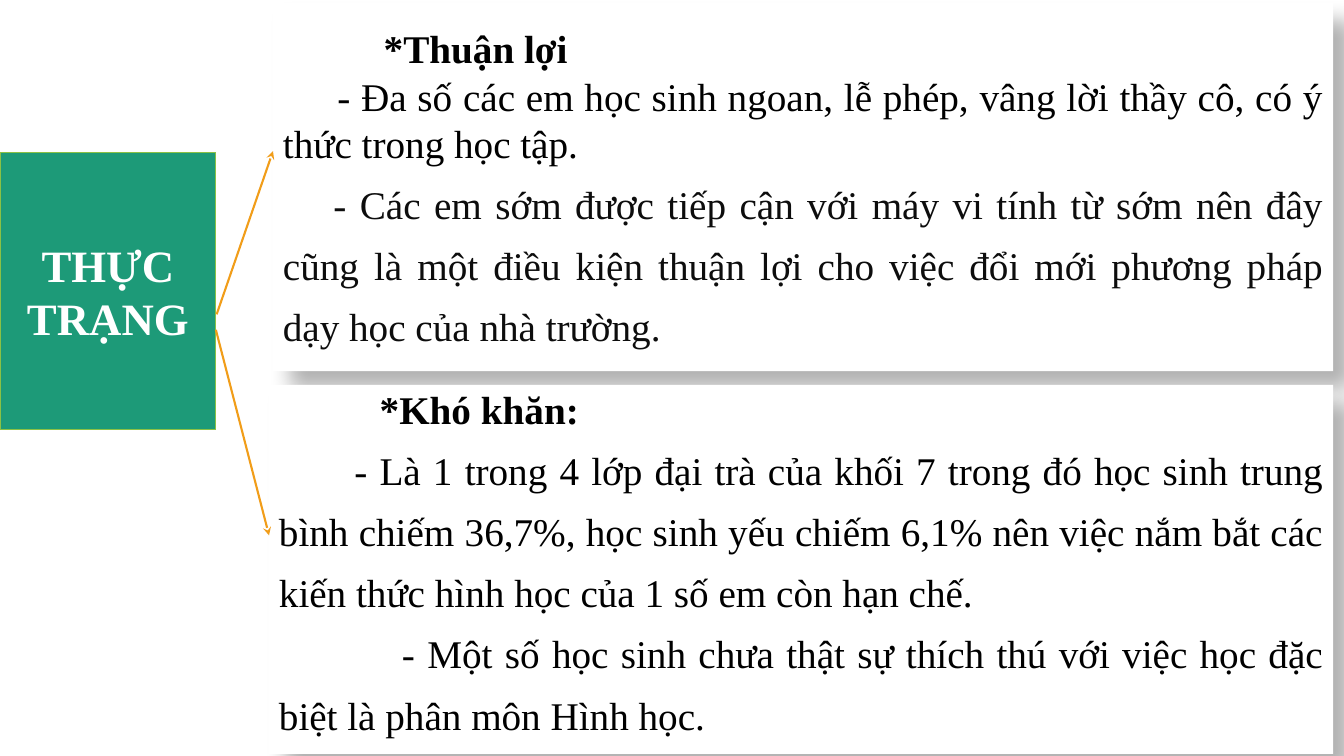
from dataclasses import dataclass

from lxml import etree
from pptx import Presentation
from pptx import util as u
from pptx.dml.color import RGBColor
from pptx.enum import shapes, text
from pptx.oxml import ns

FONT = "Times New Roman"


@dataclass
class Line:
    content: str
    indent: float
    spacing: float = 1.0
    bold: bool = False
    color: str = "000000"


@dataclass
class Panel:
    left: float
    top: float
    width: float
    height: float
    bottom_inset: float
    lines: list[Line]


@dataclass
class Arrow:
    start: tuple[float, float]
    end: tuple[float, float]


PANELS = [
    Panel(6.88, 0.08, 26.72, 9.27, 0.13, [
        Line("*Thuận lợi", 2.54, bold=True),
        Line("- Đa số các em học sinh ngoan, lễ phép, vâng lời thầy cô, "
             "có ý thức trong học tập.", 1.37),
        Line("- Các em sớm được tiếp cận với máy vi tính từ sớm nên đây cũng là "
             "một điều kiện thuận lợi cho việc đổi mới phương pháp dạy học của "
             "nhà trường.", 1.27, 1.3, color="0D0D0D"),
    ]),
    Panel(6.78, 9.7, 26.82, 9.3, 0.53, [
        Line("*Khó khăn:", 2.54, bold=True),
        Line("- Là 1 trong 4 lớp đại trà của khối 7 trong đó học sinh trung bình "
             "chiếm 36,7%, học sinh yếu chiếm 6,1% nên việc nắm bắt các kiến thức "
             "hình học của 1 số em còn hạn chế.", 1.9, 1.3),
        Line("- Một số học sinh chưa thật sự thích thú với việc học đặc biệt là "
             "phân môn Hình học.", 3.1, 1.3),
    ]),
]
ARROWS = [
    Arrow((5.46, 7.92), (6.88, 3.81)),
    Arrow((5.44, 8.31), (6.78, 13.49)),
]


def rgb(value: str) -> RGBColor:
    return RGBColor.from_string(value)


def add_element(parent, tag: str, **attributes: str):
    element = etree.SubElement(parent, ns.qn(tag))
    for name, value in attributes.items():
        element.set(name, value)
    return element


def place(shape, left: float, top: float, width: float, height: float,
          geometry: str, fill: str) -> None:
    """Move a placeholder and give it an outline shape and a fill."""
    shape.left, shape.top = u.Cm(left), u.Cm(top)
    shape.width, shape.height = u.Cm(width), u.Cm(height)
    outline = add_element(shape._element.spPr, "a:prstGeom", prst=geometry)
    add_element(outline, "a:avLst")
    shape.fill.solid()
    shape.fill.fore_color.rgb = rgb(fill)
    frame = shape.text_frame
    frame.word_wrap = True
    frame.auto_size = text.MSO_AUTO_SIZE.NONE
    frame.vertical_anchor = text.MSO_ANCHOR.MIDDLE


def format_runs(paragraph, size: float, bold: bool, color: str) -> None:
    for run in paragraph.runs:
        run.font.name = FONT
        run.font.size = u.Pt(size)
        run.font.bold = bold
        run.font.color.rgb = rgb(color)


def add_shadow(shape) -> None:
    shape.shadow.inherit = False
    effects = shape._element.spPr.find(ns.qn("a:effectLst"))
    shadow = add_element(effects, "a:outerShdw", blurRad=str(u.Pt(15)),
                         dist=str(u.Pt(18)), dir=str(45 * 60000),
                         algn="tl", rotWithShape="0")
    color = add_element(shadow, "a:srgbClr", val="000000")
    add_element(color, "a:alpha", val="30000")


def draw_title(shape) -> None:
    place(shape, 0, 3.84, 5.44, 6.99, "roundRect", "1D9A78")
    shape.line.color.rgb = rgb("8BC145")
    shape.line.width = u.Pt(0.5)
    frame = shape.text_frame
    frame.margin_left = frame.margin_right = u.Cm(0.25)
    frame.margin_top = frame.margin_bottom = u.Cm(0.25)
    frame.text = "THỰC TRẠNG"
    frame.paragraphs[0].alignment = text.PP_ALIGN.CENTER
    format_runs(frame.paragraphs[0], 32, True, "FFFFFF")


def draw_panel(shape, panel: Panel) -> None:
    place(shape, panel.left, panel.top, panel.width, panel.height, "rect", "FFFFFF")
    shape.line.fill.background()
    add_shadow(shape)
    frame = shape.text_frame
    frame.margin_left = frame.margin_right = u.Cm(0.25)
    frame.margin_top, frame.margin_bottom = u.Cm(0.13), u.Cm(panel.bottom_inset)
    frame.text = "\n".join(line.content for line in panel.lines)
    for paragraph, line in zip(frame.paragraphs, panel.lines):
        properties = paragraph._p.get_or_add_pPr()
        properties.set("marL", "0")
        properties.set("indent", str(u.Cm(line.indent)))
        add_element(properties, "a:buNone")
        paragraph.alignment = text.PP_ALIGN.JUSTIFY
        paragraph.line_spacing = line.spacing
        paragraph.space_before = u.Pt(0)
        format_runs(paragraph, 28, line.bold, line.color)


def draw_arrow(slide, arrow: Arrow) -> None:
    points = [u.Cm(value) for value in (*arrow.start, *arrow.end)]
    connector = slide.shapes.add_connector(shapes.MSO_CONNECTOR.STRAIGHT, *points)
    connector.line.color.rgb = rgb("F19D19")
    connector.line.width = u.Pt(1.5)
    add_element(connector.line._get_or_add_ln(), "a:tailEnd", type="stealth")
    add_element(connector._element.spPr, "a:effectLst")


def main() -> None:
    presentation = Presentation()
    presentation.slide_width, presentation.slide_height = u.Cm(33.87), u.Cm(19.05)
    slide = presentation.slides.add_slide(
        presentation.slide_layouts.get_by_name("Two Content"))
    title, *bodies = slide.placeholders
    draw_title(title)
    for body, panel in zip(bodies, PANELS):
        draw_panel(body, panel)
    for arrow in ARROWS:
        draw_arrow(slide, arrow)
    presentation.save("out.pptx")


if __name__ == "__main__":
    main()
